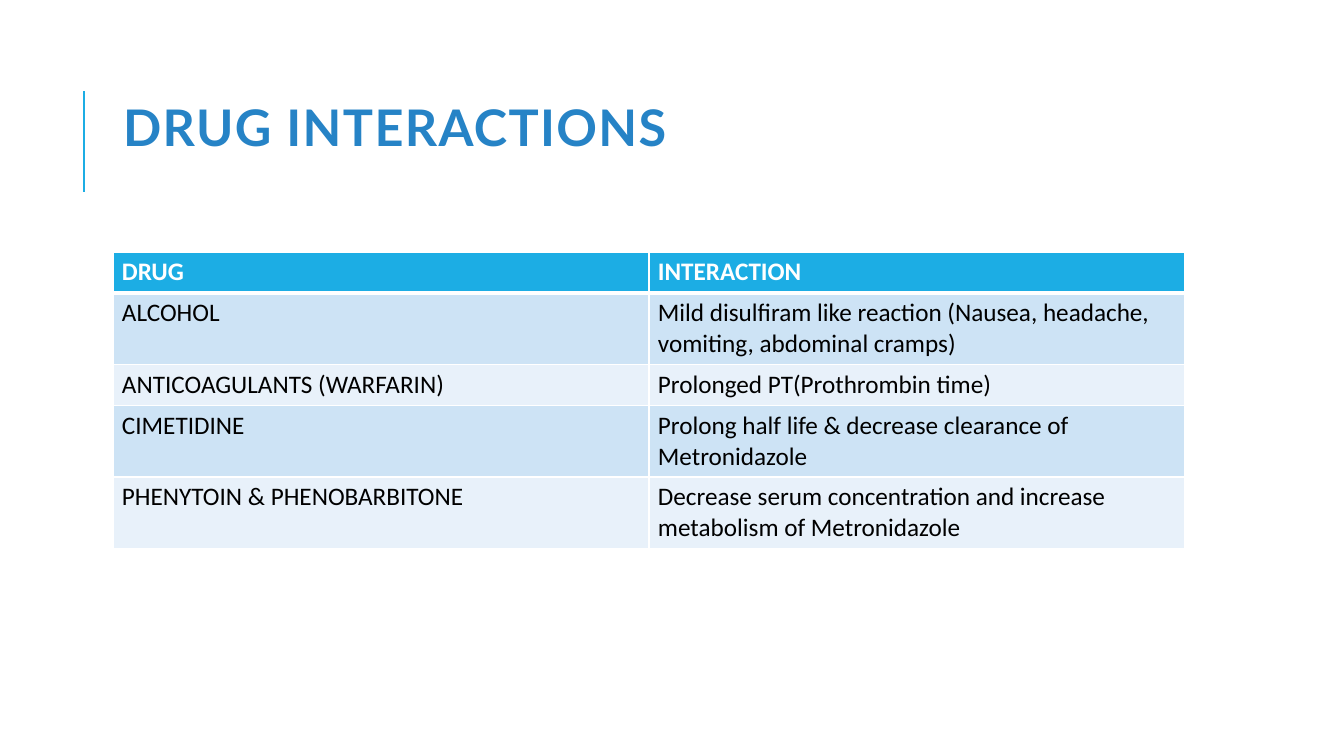
"""Build the drug interactions slide."""
import pptx
import pptx.util
import pptx.enum.shapes
import pptx.enum.text
import pptx.oxml
import pptx.oxml.ns
from pptx.dml.color import RGBColor

TITLE = "DRUG INTERACTIONS"
ROWS = [
    ("DRUG", "INTERACTION", 41),
    ("ALCOHOL", "Mild disulfiram like reaction (Nausea, headache, vomiting, abdominal cramps)", 71),
    ("ANTICOAGULANTS (WARFARIN)", "Prolonged PT(Prothrombin time)", 41),
    ("CIMETIDINE", "Prolong half life & decrease clearance of Metronidazole", 71),
    ("PHENYTOIN & PHENOBARBITONE",
     "Decrease serum concentration and increase metabolism of Metronidazole", 71),
]
CYAN = RGBColor(0x1C, 0xAD, 0xE4)
BLUE = RGBColor(0x26, 0x83, 0xC6)
WHITE = RGBColor(0xFF, 0xFF, 0xFF)
BLACK = RGBColor(0, 0, 0)
BANDS = [RGBColor(0xE8, 0xF1, 0xFA), RGBColor(0xCD, 0xE3, 0xF5)]
LEFT, WIDE = 113, 1072
ANCHOR = pptx.enum.text.MSO_ANCHOR
Pt = pptx.util.Pt


def px(num):
    """Turn px into EMU."""
    return round(num * 914400 / 100.8)


def put(item, **form):
    """Set each format value on an item."""
    for key, val in form.items():
        setattr(item, key, val)


def style(font, color, **form):
    """Format a font and its colour."""
    put(font, **form)
    font.color.rgb = color


def edge(cell, side, width):
    """Add a white border to one side of a cell."""
    cell._tc.get_or_add_tcPr().append(pptx.oxml.parse_xml(
        f'<a:ln{side} {pptx.oxml.ns.nsdecls("a")} w="{Pt(width)}">'
        f'<a:solidFill><a:srgbClr val="{WHITE}"/></a:solidFill></a:ln{side}>'))


def add_title(slide):
    """Place the title and the rule beside it."""
    rule = slide.shapes.add_connector(
        pptx.enum.shapes.MSO_CONNECTOR.STRAIGHT, px(84), px(192), px(84), px(91))
    rule.line.color.rgb = CYAN
    rule.line.width = Pt(1.5)
    rule._element.spPr.append(pptx.oxml.parse_xml(
        f'<a:effectLst {pptx.oxml.ns.nsdecls("a")}/>'))
    title = slide.shapes.title
    put(title, left=px(LEFT), top=px(65), width=px(WIDE), height=px(135))
    put(title.text_frame, text=TITLE, word_wrap=True, vertical_anchor=ANCHOR.MIDDLE,
        auto_size=pptx.enum.text.MSO_AUTO_SIZE.NONE)
    para = title.text_frame.paragraphs[0]
    put(para, alignment=pptx.enum.text.PP_ALIGN.LEFT, line_spacing=0.8)
    run = para.runs[0]
    style(run.font, BLUE, name="Lato", size=Pt(36), bold=True)
    run._r.get_or_add_rPr().set("spc", "100")


def add_grid(slide):
    """Place the banded table."""
    high = sum(row[-1] for row in ROWS)
    grid = slide.shapes.add_table(
        len(ROWS), 2, px(LEFT), px(252), px(WIDE), px(high)).table
    for col in grid.columns:
        col.width = px(WIDE // 2)
    for r, (*texts, tall) in enumerate(ROWS):
        head = r == 0
        grid.rows[r].height = px(tall)
        for c, text in enumerate(texts):
            cell = grid.cell(r, c)
            put(cell, text=text, vertical_anchor=ANCHOR.TOP,
                margin_left=px(9), margin_right=px(9), margin_top=px(5), margin_bottom=px(5))
            for side in "LRTB":
                thick = (head and side == "B") or (r == 1 and side == "T")
                edge(cell, side, 3 if thick else 1)
            cell.fill.solid()
            cell.fill.fore_color.rgb = CYAN if head else BANDS[r % 2]
            style(cell.text_frame.paragraphs[0].runs[0].font, WHITE if head else BLACK,
                  name="Calibri", size=Pt(18), bold=head)


def main():
    """Build and save the slide."""
    deck = pptx.Presentation()
    put(deck, slide_width=px(1344), slide_height=px(756))
    slide = deck.slides.add_slide(deck.slide_layouts[5])
    add_title(slide)
    add_grid(slide)
    deck.save("out.pptx")


if __name__ == "__main__":
    main()
